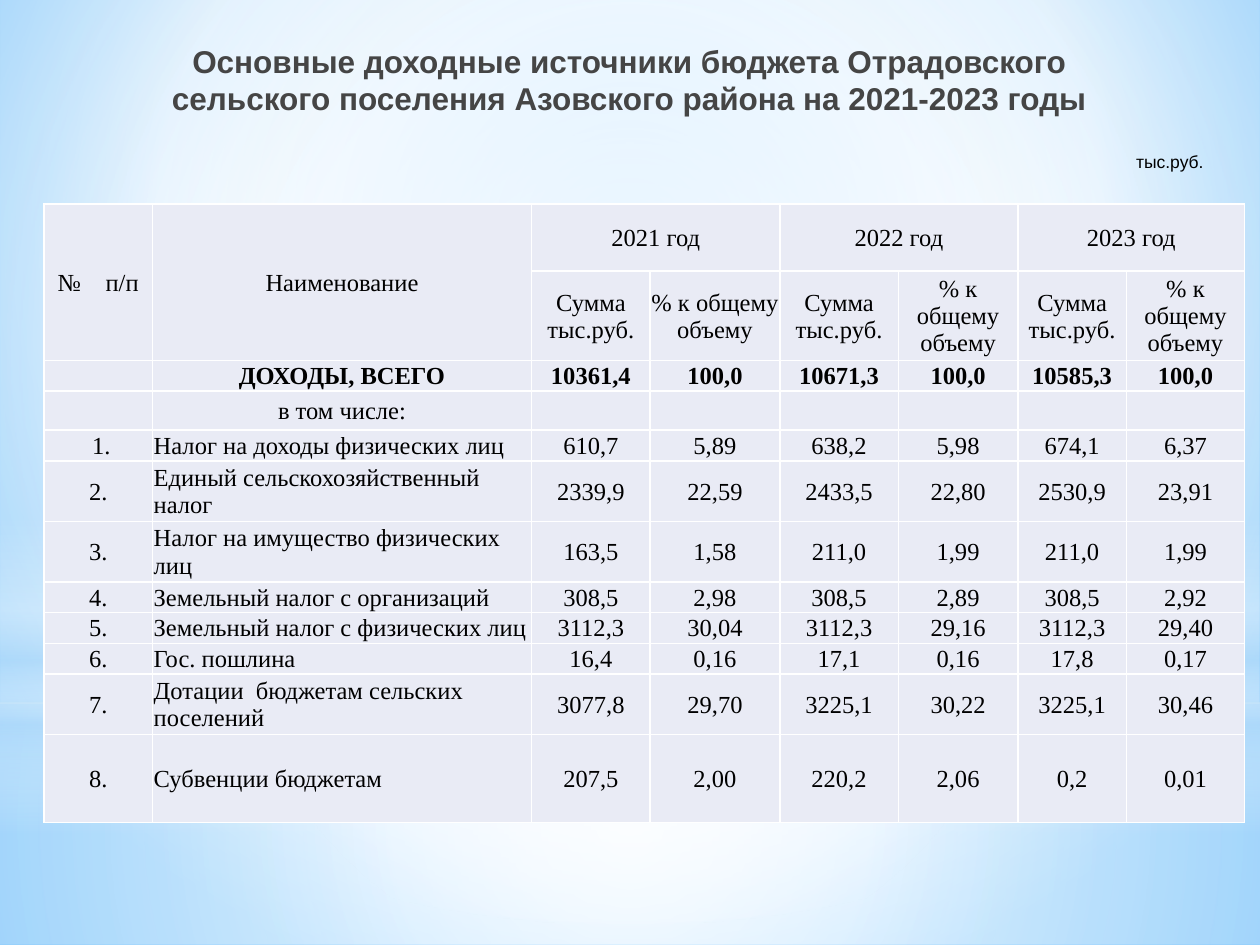
import pptx
import pptx.dml.color
import pptx.enum.shapes
import pptx.enum.text
import pptx.oxml
import pptx.oxml.ns
import pptx.util

Inches = pptx.util.Inches
Pt = pptx.util.Pt
RGBColor = pptx.dml.color.RGBColor
Shape = pptx.enum.shapes.MSO_SHAPE
Align = pptx.enum.text.PP_ALIGN
Anchor = pptx.enum.text.MSO_ANCHOR
qn = pptx.oxml.ns.qn

WHITE = RGBColor(0xFF, 0xFF, 0xFF)
BLACK = RGBColor(0, 0, 0)
TITLE_GRAY = RGBColor(0x45, 0x45, 0x45)
CELL_FILL = RGBColor(0xE9, 0xEB, 0xF5)
PALE_BLUE = RGBColor(0xB4, 0xDC, 0xFA)
SKY_BLUE = RGBColor(0x9E, 0xD5, 0xFF)
DEEP_BLUE = RGBColor(0x5B, 0xB9, 0xFF)

TITLE = ("Основные доходные источники бюджета Отрадовского "
         "сельского поселения Азовского района на 2021-2023 годы")
YEARS = ["2021 год", "2022 год", "2023 год"]
BODY_ROWS = [
    ["", "ДОХОДЫ, ВСЕГО", "10361,4", "100,0", "10671,3", "100,0", "10585,3", "100,0"],
    ["", "в том числе:"] + [""] * 6,
    [" 1.", "Налог на доходы физических лиц",
     "610,7", "5,89", "638,2", "5,98", "674,1", "6,37"],
    ["2.", "Единый сельскохозяйственный налог",
     "2339,9", "22,59", "2433,5", "22,80", "2530,9", "23,91"],
    ["3.", "Налог на имущество физических лиц",
     "163,5", "1,58", "211,0", "1,99", "211,0", "1,99"],
    ["4.", "Земельный налог с организаций",
     "308,5", "2,98", "308,5", "2,89", "308,5", "2,92"],
    ["5.", "Земельный налог с физических лиц",
     "3112,3", "30,04", "3112,3", "29,16", "3112,3", "29,40"],
    ["6.", "Гос. пошлина", "16,4", "0,16", "17,1", "0,16", "17,8", "0,17"],
    ["7.", "Дотации  бюджетам сельских поселений",
     "3077,8", "29,70", "3225,1", "30,22", "3225,1", "30,46"],
    ["8.", "Субвенции бюджетам", "207,5", "2,00", "220,2", "2,06", "0,2", "0,01"],
]
COLUMN_WIDTHS = [0.86, 3.01, 0.94, 1.03, 0.94, 0.95, 0.86, 0.94]
ROW_HEIGHTS = [0.53, 0.71, 0.24, 0.31, 0.24, 0.48, 0.48, 0.24, 0.24, 0.24, 0.48, 0.7]
TOTAL_ROW = 2
FIRST_ITEM_ROW = 4
NAME_COLUMN = 1

CENTER = (50, 50, 50, 50)


def set_gradient(fill, element, stops, focus=None):
    """Fill with (position, colour, opacity) stops: circular around focus, else top to bottom."""
    fill.solid()
    stop_xml = "".join(
        f'<a:gs pos="{position * 1000}"><a:srgbClr val="{color}">'
        f'<a:alpha val="{opacity * 1000}"/></a:srgbClr></a:gs>'
        for position, color, opacity in stops)
    if focus:
        sides = " ".join(f'{side}="{value * 1000}"' for side, value in zip("ltrb", focus))
        direction = f'<a:path path="circle"><a:fillToRect {sides}/></a:path>'
    else:
        direction = '<a:lin ang="5400000" scaled="0"/>'
    gradient = pptx.oxml.parse_xml(
        f'<a:gradFill {pptx.oxml.ns.nsdecls("a")} rotWithShape="1">'
        f'<a:gsLst>{stop_xml}</a:gsLst>{direction}</a:gradFill>')
    solid = element.find(".//" + qn("a:solidFill"))
    solid.getparent().replace(solid, gradient)


def add_glow(slide, kind, top, height, stops, focus=None):
    glow = slide.shapes.add_shape(kind, 0, Inches(top), Inches(10), Inches(height))
    glow.shadow.inherit = False
    glow.line.fill.background()
    set_gradient(glow.fill, glow.element, stops, focus)


def add_backdrop(slide):
    set_gradient(slide.background.fill, slide.element,
                 [(0, SKY_BLUE, 100), (60, WHITE, 100), (100, DEEP_BLUE, 100)],
                 (20, 10, 20, 60))
    add_glow(slide, Shape.RECTANGLE, 5.58, 1.92,
             [(0, WHITE, 91), (37, WHITE, 76), (100, PALE_BLUE, 79)], CENTER)
    add_glow(slide, Shape.RECTANGLE, 0, 5.58,
             [(0, WHITE, 89), (48, WHITE, 62), (100, PALE_BLUE, 79)], CENTER)
    add_glow(slide, Shape.RECTANGLE, 4.12, 2.5,
             [(0, WHITE, 0), (29, WHITE, 30), (45, PALE_BLUE, 40),
              (55, WHITE, 26), (65, PALE_BLUE, 60), (100, WHITE, 0)])
    add_glow(slide, Shape.OVAL, 1.75, 5.58, [(0, WHITE, 100), (56, WHITE, 0)], CENTER)


def write_text(frame, text, font_name, size, color, align, bold=False):
    frame.word_wrap = True
    para = frame.paragraphs[0]
    para.text = text
    para.alignment = align
    para.font.name = font_name
    para.font.size = Pt(size)
    para.font.color.rgb = color
    para.font.bold = bold


def place_title(slide):
    title = slide.shapes.title
    title.left, title.top = Inches(1.21), Inches(0.28)
    title.width, title.height = Inches(7.57), Inches(1.25)
    title.text_frame.vertical_anchor = Anchor.TOP
    write_text(title.text_frame, TITLE, "Arial", 18, TITLE_GRAY, Align.CENTER, True)
    title.element.getparent().append(title.element)  # bring in front of the backdrop


def add_unit_note(slide):
    note = slide.shapes.add_textbox(Inches(7.92), Inches(1.15), Inches(1.73), Inches(0.27))
    write_text(note.text_frame, "тыс.руб.", "Arial", 10, BLACK, Align.RIGHT)


def add_borders(cell):
    properties = cell._tc.get_or_add_tcPr()
    for index, side in enumerate(["lnL", "lnR", "lnT", "lnB"]):
        properties.insert(index, pptx.oxml.parse_xml(
            f'<a:{side} {pptx.oxml.ns.nsdecls("a")} w="{Pt(1)}"><a:solidFill>'
            f'<a:srgbClr val="{WHITE}"/></a:solidFill></a:{side}>'))


def format_cell(cell, text, align, bold):
    cell.margin_left = cell.margin_right = cell.margin_top = Inches(0.01)
    cell.margin_bottom = 0
    cell.vertical_anchor = Anchor.MIDDLE
    cell.fill.solid()
    cell.fill.fore_color.rgb = CELL_FILL
    add_borders(cell)
    write_text(cell.text_frame, text, "Times New Roman", 14, BLACK, align, bold)
    if not text:  # keeps an empty cell from stretching its row
        cell.text_frame.paragraphs[0]._p.append(pptx.oxml.parse_xml(
            f'<a:endParaRPr {pptx.oxml.ns.nsdecls("a")} sz="1400"/>'))


def add_income_table(slide):
    year_row = ["№    п/п", "Наименование"]
    for year in YEARS:
        year_row += [year, ""]
    measure_row = ["", ""] + ["Сумма тыс.руб.", "% к общему объему"] * len(YEARS)
    rows = [year_row, measure_row] + BODY_ROWS

    table = slide.shapes.add_table(
        len(rows), len(COLUMN_WIDTHS), Inches(0.35), Inches(1.62),
        Inches(sum(COLUMN_WIDTHS)), Inches(sum(ROW_HEIGHTS))).table
    table.first_row = table.horz_banding = False
    for column, width in zip(table.columns, COLUMN_WIDTHS):
        column.width = Inches(width)
    for row, height in zip(table.rows, ROW_HEIGHTS):
        row.height = Inches(height)

    for r, texts in enumerate(rows):
        for c, text in enumerate(texts):
            is_item_name = r >= FIRST_ITEM_ROW and c == NAME_COLUMN
            format_cell(table.cell(r, c), text,
                        Align.LEFT if is_item_name else Align.CENTER, r == TOTAL_ROW)
    for c in range(2):
        table.cell(0, c).merge(table.cell(1, c))
    for c in range(2, len(COLUMN_WIDTHS), 2):
        table.cell(0, c).merge(table.cell(0, c + 1))


def main():
    deck = pptx.Presentation()
    deck.slide_width, deck.slide_height = Inches(10), Inches(7.5)
    slide = deck.slides.add_slide(deck.slide_layouts[5])
    add_backdrop(slide)
    place_title(slide)
    add_unit_note(slide)
    add_income_table(slide)
    deck.save("out.pptx")


if __name__ == "__main__":
    main()
